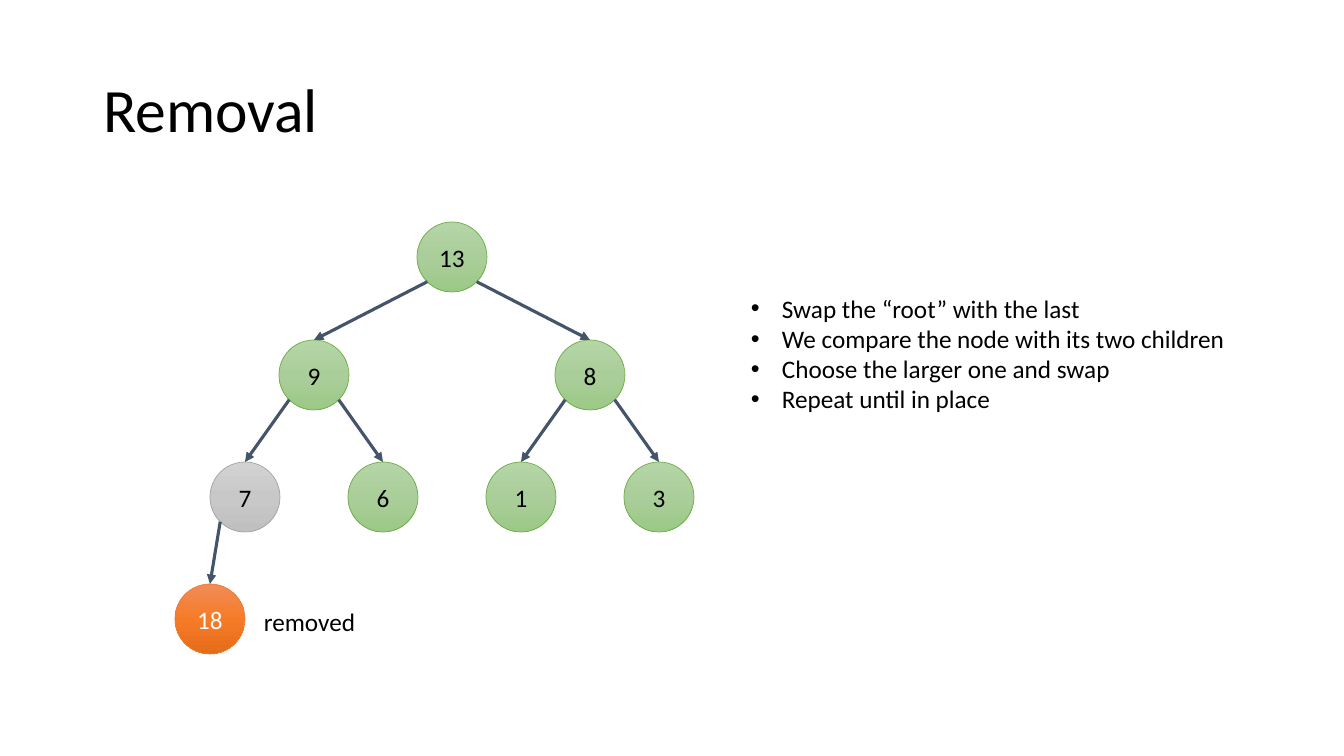
from copy import deepcopy
from math import sqrt

from pptx import Presentation
from pptx.dml.color import RGBColor
from pptx.enum.shapes import MSO_CONNECTOR, MSO_SHAPE
from pptx.enum.text import MSO_ANCHOR, MSO_AUTO_SIZE, PP_ALIGN
from pptx.oxml.ns import qn
from pptx.util import Pt
from lxml import etree

ELLIPSE, STRAIGHT = MSO_SHAPE.OVAL, MSO_CONNECTOR.STRAIGHT
MIDDLE, LEFT, CENTER = MSO_ANCHOR.MIDDLE, PP_ALIGN.LEFT, PP_ALIGN.CENTER
NO_FIT, GROW = MSO_AUTO_SIZE.NONE, MSO_AUTO_SIZE.SHAPE_TO_FIT_TEXT
TOP_SITE = 0

# Content: the heap in level order, each value with its state
TITLE = "Removal"
HEAP = [(13, "kept"), (9, "kept"), (8, "kept"), (7, "current"),
        (6, "kept"), (1, "kept"), (3, "kept"), (18, "removed")]
STEPS = [
    "Swap the “root” with the last",
    "We compare the node with its two children",
    "Choose the larger one and swap",
    "Repeat until in place",
]
REMOVED_LABEL = "removed"

THEME = {
    "font": "Calibri", "title_size": 44, "body_size": 18,
    "text": "000000", "edge": "44546A", "edge_width": 2.25, "outline_width": 0.5,
    # state: gradient from top to bottom, outline, text
    "kept": (("B5D5A7", "AACE9A", "9CC987"), "70AD47", "000000"),
    "current": (("D2D2D2", "C8C8C8", "C0C0C0"), "A5A5A5", "000000"),
    "removed": (("F18C57", "F67B28", "E56C19"), "ED7D31", "FFFFFF"),
}

# Layout in px
SLIDE = (1344, 756)
TITLE_BOX = (93, 40, 1159, 146)
STEPS_BOX = (741, 288, 500, 132)
REMOVED_BOX = (254, 601, 113, 40)
NODE = 70
ROOT_X = 452
ROW_CENTERS = (257, 375, 497, 619)
CHILD_OFFSETS = (138, 69, 35)
BULLET_INDENT = 31


def px(length):
    return round(length * 914400 / 100.8)


def rgb(value):
    return RGBColor.from_string(value)


def style_text(frame, size, color, align=LEFT):
    for paragraph in frame.paragraphs:
        paragraph.alignment = align
        for run in paragraph.runs:
            run.font.name = THEME["font"]
            run.font.size = Pt(size)
            run.font.color.rgb = rgb(color)


def add_text(box, text):
    frame = slide.shapes.add_textbox(*map(px, box)).text_frame
    frame.word_wrap = False
    frame.auto_size = GROW
    frame.text = text
    style_text(frame, THEME["body_size"], THEME["text"])
    return frame


def fill_gradient(shape, colors):
    shape.fill.gradient()
    shape.fill.gradient_angle = 270
    first_stop = next(shape._element.spPr.iter(qn("a:gs")))
    first_stop.addnext(deepcopy(first_stop))
    for i, (stop, color) in enumerate(zip(shape.fill.gradient_stops, colors)):
        stop.position = i / (len(colors) - 1)
        stop.color.rgb = rgb(color)


def add_node(center, value, state):
    gradient, outline, text_color = THEME[state]
    left, top = (c - NODE / 2 for c in center)
    node = slide.shapes.add_shape(ELLIPSE, px(left), px(top), px(NODE), px(NODE))
    node.shadow.inherit = False
    fill_gradient(node, gradient)
    node.line.color.rgb = rgb(outline)
    node.line.width = Pt(THEME["outline_width"])
    node.text_frame.text = str(value)
    node.text_frame.vertical_anchor = MIDDLE
    style_text(node.text_frame, THEME["body_size"], text_color, CENTER)
    return node


def add_edge(parent_center, side, child):
    reach = NODE / 2 / sqrt(2)
    x, y = parent_center[0] + side * reach, parent_center[1] + reach
    edge = slide.shapes.add_connector(STRAIGHT, px(x), px(y), px(x), px(y))
    edge.end_connect(child, TOP_SITE)
    edge.line.color.rgb = rgb(THEME["edge"])
    edge.line.width = Pt(THEME["edge_width"])
    etree.SubElement(edge.line._get_or_add_ln(), qn("a:tailEnd"), type="triangle")
    etree.SubElement(edge._element.spPr, qn("a:effectLst"))


deck = Presentation()
deck.slide_width, deck.slide_height = map(px, SLIDE)
slide = deck.slides.add_slide(deck.slide_layouts.get_by_name("Title Only"))

# Title
title = slide.shapes.title
title.left, title.top, title.width, title.height = map(px, TITLE_BOX)
title.text_frame.text = TITLE
title.text_frame.auto_size = NO_FIT
title.text_frame.vertical_anchor = MIDDLE
title.text_frame.paragraphs[0].line_spacing = 0.9
style_text(title.text_frame, THEME["title_size"], THEME["text"])

# Heap: children of node i are 2i + 1 (left) and 2i + 2 (right)
centers = []
for i, (value, state) in enumerate(HEAP):
    level = (i + 1).bit_length() - 1
    if i == 0:
        centers.append((ROOT_X, ROW_CENTERS[0]))
        add_node(centers[0], value, state)
        continue
    parent_center = centers[(i - 1) // 2]
    side = -1 if i % 2 else 1
    centers.append((parent_center[0] + side * CHILD_OFFSETS[level - 1],
                    ROW_CENTERS[level]))
    add_edge(parent_center, side, add_node(centers[i], value, state))

# Steps
for step in add_text(STEPS_BOX, "\n".join(STEPS)).paragraphs:
    properties = step._p.get_or_add_pPr()
    properties.set("marL", str(px(BULLET_INDENT)))
    properties.set("indent", str(-px(BULLET_INDENT)))
    etree.SubElement(properties, qn("a:buFont"), typeface="Arial")
    etree.SubElement(properties, qn("a:buChar"), char="•")

# Label of the removed node
add_text(REMOVED_BOX, REMOVED_LABEL)

deck.save("out.pptx")
